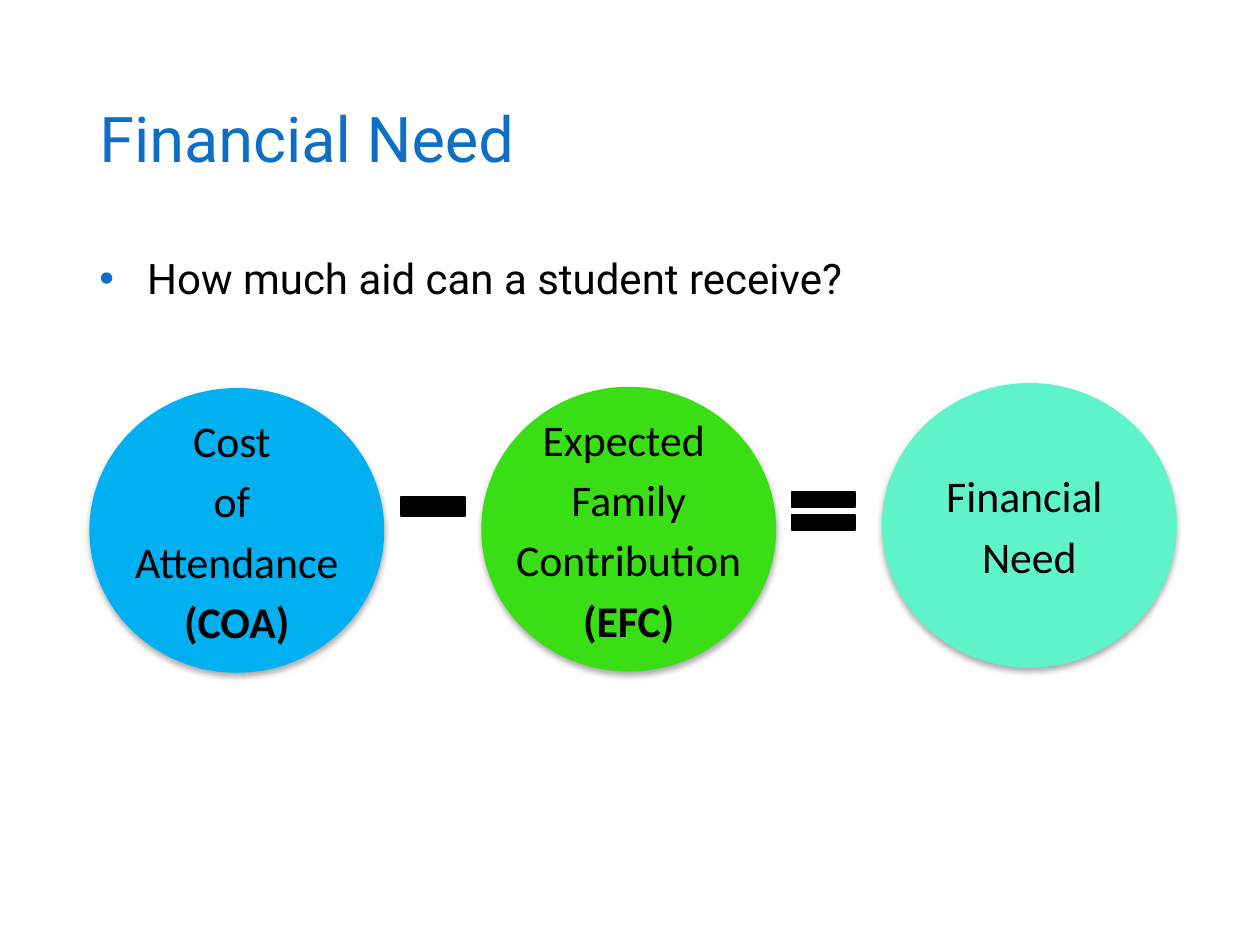
from lxml.etree import SubElement
from pptx import Presentation
from pptx.dml.color import RGBColor
from pptx.enum.shapes import MSO_SHAPE as Shape
from pptx.enum.text import MSO_ANCHOR as Anchor, PP_ALIGN as Align
from pptx.oxml.ns import qn
from pptx.util import Inches, Pt

BLUE = RGBColor(0x0F, 0x6F, 0xC6)
BLACK = RGBColor(0, 0, 0)
MINT = RGBColor(0x5F, 0xF3, 0xCA)
GREEN = RGBColor(0x3A, 0xDE, 0x14)
SKY = RGBColor(0x00, 0xB0, 0xF0)


def add_text(para, text, font="Roboto", size=24, color=BLACK, bold=False):
    """Add one formatted run to a paragraph."""
    span = para.add_run()
    span.text = text
    span.font.name = font
    span.font.size = Pt(size)
    span.font.color.rgb = color
    span.font.bold = bold


def add_bullet(para, color, indent):
    """Give a paragraph a coloured bullet and a hanging indent."""
    props = para._p.get_or_add_pPr()
    props.set("marL", str(indent))
    props.set("indent", str(-indent))
    bullet_color = SubElement(props, qn("a:buClr"))
    SubElement(bullet_color, qn("a:srgbClr"), val=str(color))
    SubElement(props, qn("a:buFont"), typeface="Arial")
    SubElement(props, qn("a:buChar"), char="•")


def add_text_box(page, top, height, anchor):
    """Add a wrapping box in the text column and return its paragraph."""
    box = page.shapes.add_textbox(Inches(0.69), Inches(top), Inches(8.62), Inches(height))
    box.text_frame.word_wrap = True
    box.text_frame.vertical_anchor = anchor
    para = box.text_frame.paragraphs[0]
    para.line_spacing = 0.9
    return para


def add_soft_shadow(shape):
    """Add a faint shadow falling straight down."""
    shape.shadow.inherit = False
    effects = shape._element.spPr.find(qn("a:effectLst"))
    shadow = SubElement(effects, qn("a:outerShdw"), blurRad=str(Pt(3.5)),
                        dist=str(Pt(2.2)), dir="5400000", rotWithShape="0")
    color = SubElement(shadow, qn("a:srgbClr"), val=str(BLACK))
    SubElement(color, qn("a:alpha"), val="32000")


def add_circle(page, left, top, fill, lines):
    """Add a shadowed term of the equation, its abbreviation in bold."""
    circle = page.shapes.add_shape(Shape.OVAL, Inches(left), Inches(top),
                                   Inches(2.34), Inches(2.26))
    circle.fill.solid()
    circle.fill.fore_color.rgb = fill
    circle.line.fill.background()
    add_soft_shadow(circle)
    frame = circle.text_frame
    frame.word_wrap = False
    frame.vertical_anchor = Anchor.MIDDLE
    for index, line in enumerate(lines):
        para = frame.add_paragraph() if index else frame.paragraphs[0]
        para.alignment = Align.CENTER
        para.space_before = Pt(4.5 if index else 0)
        add_text(para, line, font="Calibri", size=25, bold=line.startswith("("))


def add_operator(page, kind, left, top, height):
    """Add a black mathematical sign."""
    sign = page.shapes.add_shape(kind, Inches(left), Inches(top), Inches(0.69), Inches(height))
    sign.shadow.inherit = False
    sign.fill.solid()
    sign.fill.fore_color.rgb = BLACK
    sign.line.color.rgb = BLACK
    sign.line.width = Pt(1)


def main():
    """Build the financial need slide."""
    deck = Presentation()
    deck.slide_width, deck.slide_height = Inches(10), Inches(7.5)
    page = deck.slides.add_slide(deck.slide_layouts[6])

    title = add_text_box(page, 0.4, 1.45, Anchor.MIDDLE)
    add_text(title, "Financial Need", size=36, color=BLUE)
    question = add_text_box(page, 2, 4.76, Anchor.TOP)
    add_bullet(question, BLUE, Inches(0.38))
    add_text(question, "How much aid can a student receive?")

    add_circle(page, 7, 3.04, MINT, ["Financial ", "Need"])
    add_operator(page, Shape.MATH_MINUS, 3.09, 3.7, 0.64)
    add_operator(page, Shape.MATH_EQUAL, 6.19, 3.8, 0.51)
    add_circle(page, 3.82, 3.07, GREEN, ["Expected ", "Family", "Contribution", "(EFC)"])
    add_circle(page, 0.71, 3.08, SKY, ["Cost ", "of ", "Attendance", "(COA)"])

    deck.save("out.pptx")


if __name__ == "__main__":
    main()
